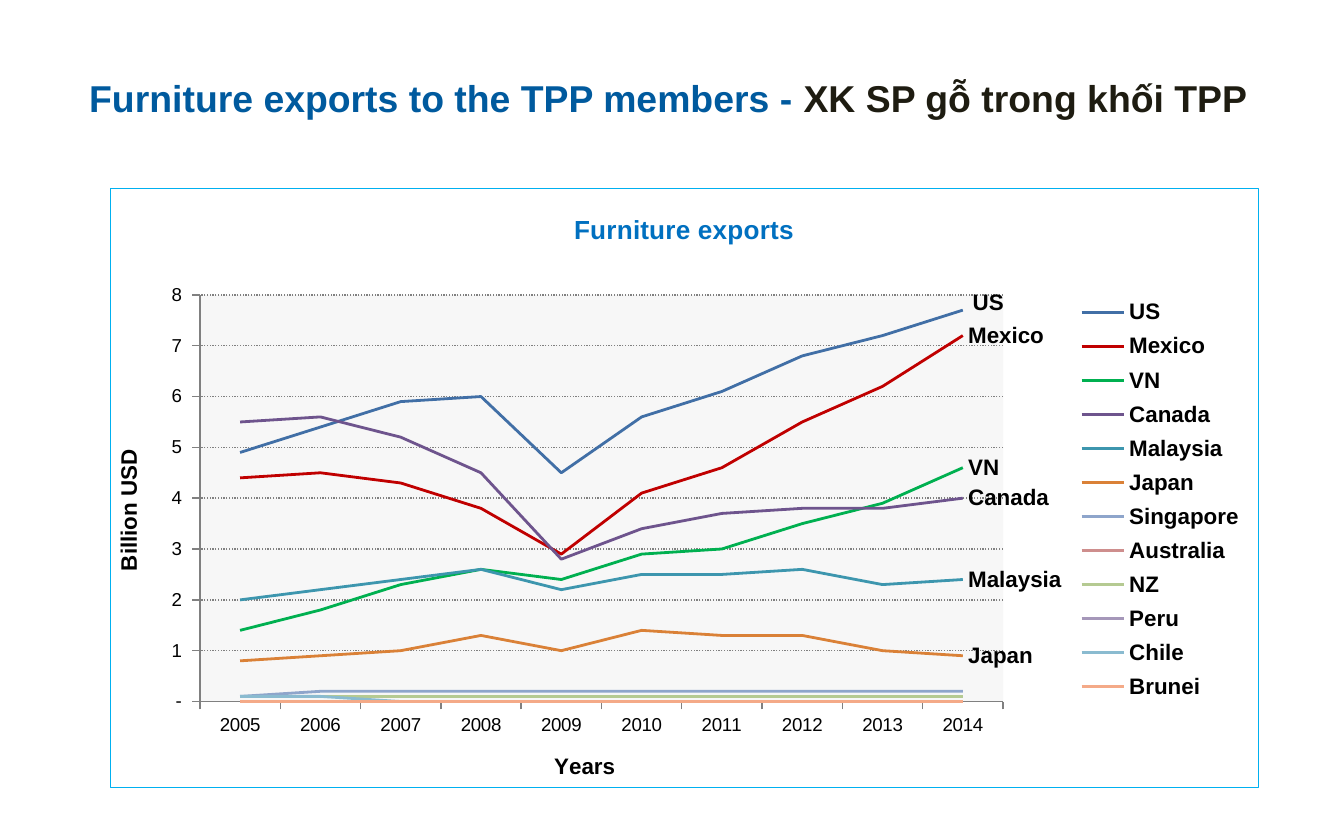
from lxml import etree
from pptx import Presentation
from pptx.chart.data import CategoryChartData
from pptx.dml.color import RGBColor
from pptx.enum.chart import XL_CHART_TYPE, XL_LABEL_POSITION, XL_LEGEND_POSITION, XL_MARKER_STYLE, XL_TICK_MARK
from pptx.enum.dml import MSO_LINE
from pptx.enum.text import PP_ALIGN
from pptx.oxml.ns import qn
from pptx.util import Inches, Pt

FONT = "Arial"
HEADING = [
    ("Furniture exports to the TPP members - ", "005A9E"),
    ("XK SP gỗ trong khối TPP ", "1E1C11"),
]
YEARS = [str(year) for year in range(2005, 2015)]
# name, line colour, exports in billion USD, label at the line's end
COUNTRIES = [
    ("US", "416FA6", [4.9, 5.4, 5.9, 6, 4.5, 5.6, 6.1, 6.8, 7.2, 7.7], True),
    ("Mexico", "C00000", [4.4, 4.5, 4.3, 3.8, 2.9, 4.1, 4.6, 5.5, 6.2, 7.2], True),
    ("VN", "00B050", [1.4, 1.8, 2.3, 2.6, 2.4, 2.9, 3, 3.5, 3.9, 4.6], True),
    ("Canada", "6E548D", [5.5, 5.6, 5.2, 4.5, 2.8, 3.4, 3.7, 3.8, 3.8, 4], True),
    ("Malaysia", "3D96AE", [2, 2.2, 2.4, 2.6, 2.2, 2.5, 2.5, 2.6, 2.3, 2.4], True),
    ("Japan", "DA8137", [0.8, 0.9, 1, 1.3, 1, 1.4, 1.3, 1.3, 1, 0.9], True),
    ("Singapore", "8EA5CB", [0.1] + [0.2] * 9, False),
    ("Australia", "CE8E8D", [0.1] * 10, False),
    ("NZ", "B5CA92", [0.1] * 10, False),
    ("Peru", "A597B9", [0] * 10, False),
    ("Chile", "8ABBD0", [0.1] * 2 + [0] * 8, False),
    ("Brunei", "F4AA88", [0] * 10, False),
]


def color(hex_text):
    return RGBColor.from_string(hex_text)


def style(font, size, hex_text="000000", bold=True):
    font.name = FONT
    font.size = Pt(size)
    font.bold = bold
    font.color.rgb = color(hex_text)


def add_child(parent, tag, **attributes):
    return etree.SubElement(parent, qn(tag), attributes)


def manual_layout(**settings):
    """Return a c:layout element; settings are given in schema order."""
    layout = etree.Element(qn("c:layout"))
    manual = add_child(layout, "c:manualLayout")
    for name, value in settings.items():
        add_child(manual, f"c:{name}", val=str(value))
    return layout


def add_heading(page):
    box = page.shapes.add_textbox(Inches(0.23), Inches(0.51), Inches(9.56), Inches(0.44))
    box.text_frame.word_wrap = True
    para = box.text_frame.paragraphs[0]
    para.alignment = PP_ALIGN.CENTER
    for text, hex_text in HEADING:
        span = para.add_run()
        span.text = text
        style(span.font, 20, hex_text)


def set_title(owner, text, hex_text="000000"):
    frame = (owner.chart_title if hasattr(owner, "chart_title") else owner.axis_title).text_frame
    frame.text = text
    style(frame.paragraphs[0].runs[0].font, 14 if hex_text != "000000" else 12, hex_text)


def style_axis(axis, title):
    set_title(axis, title)
    style(axis.tick_labels.font, 10, bold=False)
    axis.major_tick_mark = XL_TICK_MARK.OUTSIDE
    axis.minor_tick_mark = XL_TICK_MARK.NONE
    axis.format.line.color.rgb = color("808080")
    axis.format.line.width = Pt(0.75)


def label_line_end(series):
    """Show the series name to the right of the last point."""
    series.data_labels.show_value = False
    label = series.points[len(YEARS) - 1].data_label
    style(label.font, 12)
    label.position = XL_LABEL_POSITION.RIGHT
    for element in series.data_labels._element.findall(qn("c:dLbl")):
        element.find(qn("c:showVal")).set("val", "0")
        element.find(qn("c:showSerName")).set("val", "1")
        if series.name == "US":
            element.find(qn("c:idx")).addnext(manual_layout(x=0.004, y=-0.013))


def paint_chart_areas(chart):
    space = chart._chartSpace
    plot_area = space.chart.plotArea
    for old in plot_area.findall(qn("c:layout")):
        plot_area.remove(old)
    plot_area.insert(0, manual_layout(layoutTarget="inner", xMode="edge", yMode="edge",
                                      x=0.078, y=0.178, w=0.7, h=0.679))
    plot_fill = add_child(add_child(plot_area, "c:spPr"), "a:solidFill")
    add_child(plot_fill, "a:srgbClr", val="F7F7F7")

    frame = etree.Element(qn("c:spPr"))
    add_child(frame, "a:noFill")
    border = add_child(add_child(frame, "a:ln", w=str(Pt(0.25))), "a:solidFill")
    add_child(border, "a:srgbClr", val="00B0F0")
    space.chart.addnext(frame)


def add_exports_chart(page):
    data = CategoryChartData()
    data.categories = YEARS
    for name, _, values, _ in COUNTRIES:
        data.add_series(name, values)
    chart = page.shapes.add_chart(XL_CHART_TYPE.LINE, Inches(0.82), Inches(1.4),
                                  Inches(8.54), Inches(4.46), data).chart
    style(chart.font, 12)
    set_title(chart, "Furniture exports", "0070C0")
    chart.chart_title.include_in_layout = True

    style_axis(chart.category_axis, "Years")
    value_axis = chart.value_axis
    style_axis(value_axis, "Billion USD")
    value_axis.minimum_scale, value_axis.maximum_scale, value_axis.major_unit = 0, 8, 1
    value_axis.tick_labels.number_format = '_(* #,##0_);_(* \\(#,##0\\);_(* "-"_);_(@_)'
    value_axis.tick_labels.number_format_is_linked = False
    grid = value_axis.major_gridlines.format.line
    grid.color.rgb = color("808080")
    grid.width = Pt(0.75)
    grid.dash_style = MSO_LINE.ROUND_DOT

    chart.plots[0].vary_by_categories = False
    for series, (_, hex_text, _, labelled) in zip(chart.plots[0].series, COUNTRIES):
        series.smooth = False
        series.marker.style = XL_MARKER_STYLE.NONE
        series.format.line.color.rgb = color(hex_text)
        series.format.line.width = Pt(1.5)
        if labelled:
            label_line_end(series)

    chart.has_legend = True
    legend = chart.legend
    legend.position = XL_LEGEND_POSITION.RIGHT
    legend.include_in_layout = False
    style(legend.font, 12)
    for old in legend._element.findall(qn("c:layout")):
        legend._element.remove(old)
    legend._element.find(qn("c:legendPos")).addnext(
        manual_layout(xMode="edge", yMode="edge", x=0.84, y=0.17, w=0.15, h=0.7))
    paint_chart_areas(chart)


def main():
    deck = Presentation()
    deck.slide_width, deck.slide_height = Inches(10), Inches(6.25)
    page = deck.slides.add_slide(deck.slide_layouts[6])
    add_exports_chart(page)
    add_heading(page)
    deck.save("out.pptx")


if __name__ == "__main__":
    main()
